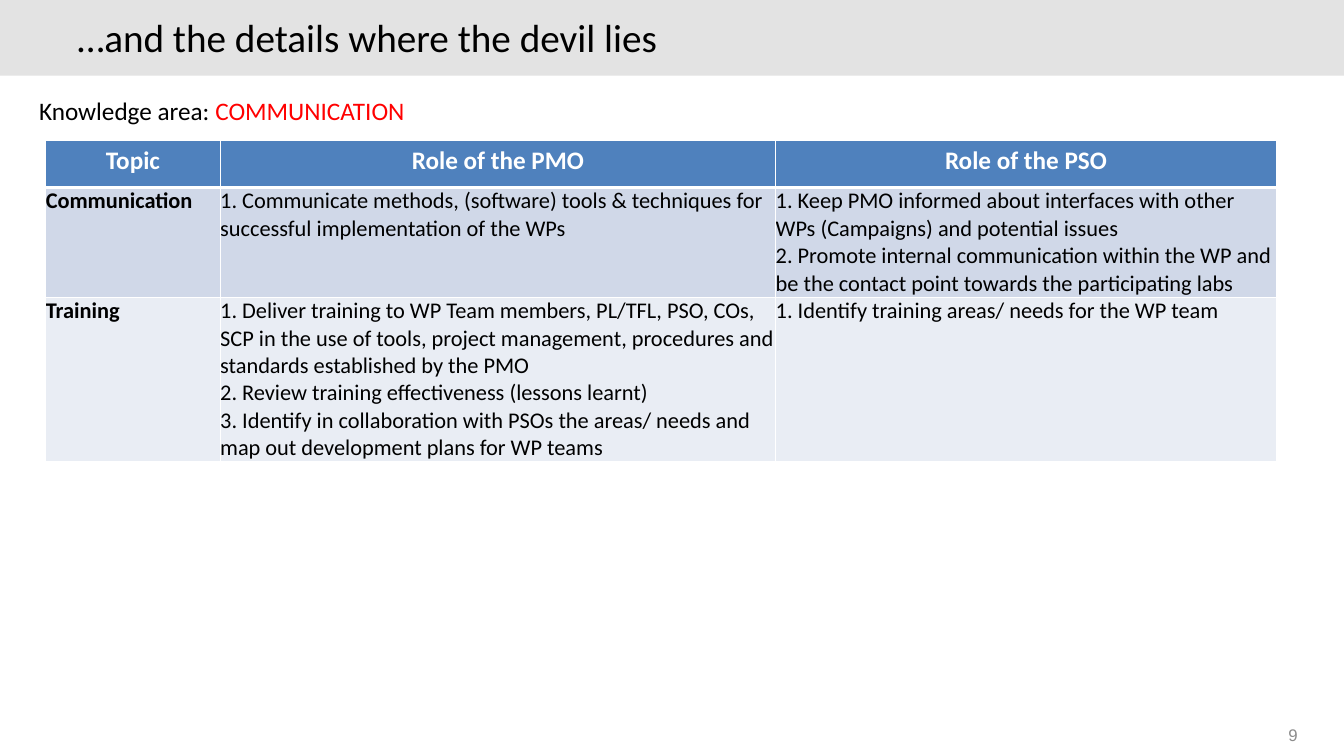
from dataclasses import dataclass

from lxml.etree import SubElement
from pptx import Presentation
from pptx.dml.color import RGBColor
from pptx.enum.shapes import MSO_SHAPE
from pptx.enum.text import MSO_ANCHOR, MSO_AUTO_SIZE, PP_ALIGN
from pptx.oxml.ns import qn
from pptx.slide import Slide
from pptx.table import _Cell
from pptx.text.text import TextFrame, _Paragraph
from pptx.util import Pt

BLACK = RGBColor(0x00, 0x00, 0x00)
WHITE = RGBColor(0xFF, 0xFF, 0xFF)
RED = RGBColor(0xFF, 0x00, 0x00)
BAND_GREY = RGBColor(0xE3, 0xE3, 0xE3)
NUMBER_GREY = RGBColor(0x8C, 0x8C, 0x8C)
HEADER_BLUE = RGBColor(0x4F, 0x81, 0xBD)
ROW_BLUE = RGBColor(0xD0, 0xD8, 0xE8)
ROW_PALE = RGBColor(0xE9, 0xED, 0xF4)

COLUMN_WIDTHS = (124.6, 396.8, 357.6)
THIN, THICK = 1, 3


@dataclass(frozen=True)
class TextStyle:
    size: float
    color: RGBColor = BLACK
    bold: bool = False
    font: str = "Calibri"


@dataclass(frozen=True)
class RoleRow:
    height: float
    fill: RGBColor
    topic: str
    pmo: tuple[str, ...]
    pso: tuple[str, ...]


HEADER = TextStyle(18, WHITE, bold=True)
TOPIC = TextStyle(16, bold=True)
DUTY = TextStyle(16)

COLUMN_TITLES = ("Topic", "Role of the PMO", "Role of the PSO")
HEADER_HEIGHT = 34
ROLE_ROWS = (
    RoleRow(
        78.5, ROW_BLUE, "Communication",
        ("1. Communicate methods, (software) tools & techniques for "
         "successful implementation of the WPs",),
        ("1. Keep PMO informed about interfaces with other WPs (Campaigns) "
         "and potential issues",
         "2. Promote internal communication within the WP and be the contact "
         "point towards the participating labs"),
    ),
    RoleRow(
        117.5, ROW_PALE, "Training",
        ("1. Deliver training to WP Team members, PL/TFL, PSO, COs, SCP in the "
         "use of tools, project management, procedures and standards "
         "established by the PMO",
         "2. Review training effectiveness (lessons learnt)",
         "3. Identify in collaboration with PSOs the areas/ needs and map out "
         "development plans for WP teams"),
        ("1. Identify training areas/ needs for the WP team",),
    ),
)


def add_run(paragraph: _Paragraph, text: str, style: TextStyle) -> None:
    run = paragraph.add_run()
    run.text = text
    run.font.name = style.font
    run.font.size = Pt(style.size)
    run.font.bold = style.bold
    run.font.color.rgb = style.color


def add_label(slide: Slide, left: float, top: float, width: float,
              height: float) -> TextFrame:
    frame = slide.shapes.add_textbox(
        Pt(left), Pt(top), Pt(width), Pt(height)).text_frame
    frame.word_wrap = True
    return frame


def set_borders(cell: _Cell, top: float, bottom: float) -> None:
    properties = cell._tc.get_or_add_tcPr()
    edges = (("a:lnL", THIN), ("a:lnR", THIN), ("a:lnT", top), ("a:lnB", bottom))
    for position, (tag, width) in enumerate(edges):
        line = SubElement(properties, qn(tag), w=str(Pt(width)))
        fill = SubElement(line, qn("a:solidFill"))
        SubElement(fill, qn("a:srgbClr"), val=str(WHITE))
        properties.insert(position, line)


def fill_cell(cell: _Cell, lines: tuple[str, ...], style: TextStyle,
              fill: RGBColor) -> None:
    cell.fill.solid()
    cell.fill.fore_color.rgb = fill
    frame = cell.text_frame
    for index, line in enumerate(lines):
        paragraph = frame.add_paragraph() if index else frame.paragraphs[0]
        add_run(paragraph, line, style)


def add_title(slide: Slide) -> None:
    title = slide.shapes.title
    title.left, title.top, title.width, title.height = (
        Pt(48), Pt(9.4), Pt(792), Pt(36))
    frame = title.text_frame
    frame.auto_size = MSO_AUTO_SIZE.NONE
    frame.vertical_anchor = MSO_ANCHOR.MIDDLE
    heading = frame.paragraphs[0]
    heading.alignment = PP_ALIGN.LEFT
    heading.line_spacing = Pt(32)
    add_run(heading, "…and the details where the devil lies", TextStyle(28))


def add_role_table(slide: Slide) -> None:
    heights = (HEADER_HEIGHT, *(row.height for row in ROLE_ROWS))
    table = slide.shapes.add_table(
        len(heights), len(COLUMN_WIDTHS), Pt(32.7), Pt(100),
        Pt(sum(COLUMN_WIDTHS)), Pt(sum(heights))).table
    for column, width in zip(table.columns, COLUMN_WIDTHS):
        column.width = Pt(width)
    for table_row, height in zip(table.rows, heights):
        table_row.height = Pt(height)

    # Column titles
    for cell, column_title in zip(table.rows[0].cells, COLUMN_TITLES):
        fill_cell(cell, (column_title,), HEADER, HEADER_BLUE)
        cell.text_frame.paragraphs[0].alignment = PP_ALIGN.CENTER
        set_borders(cell, THIN, THICK)

    # Topics with the duties of each office
    for number, row in enumerate(ROLE_ROWS, start=1):
        contents = (((row.topic,), TOPIC), (row.pmo, DUTY), (row.pso, DUTY))
        for cell, (lines, style) in zip(table.rows[number].cells, contents):
            fill_cell(cell, lines, style, row.fill)
            cell.margin_left = cell.margin_right = Pt(0)
            cell.margin_top = cell.margin_bottom = Pt(0)
            set_borders(cell, THICK if number == 1 else THIN, THIN)


def main() -> None:
    presentation = Presentation()
    presentation.slide_width, presentation.slide_height = Pt(960), Pt(540)
    slide = presentation.slides.add_slide(presentation.slide_layouts[5])

    # Title band, placed behind the title
    band = slide.shapes.add_shape(
        MSO_SHAPE.RECTANGLE, Pt(0), Pt(0), Pt(960), Pt(54))
    band.shadow.inherit = False
    band.fill.solid()
    band.fill.fore_color.rgb = BAND_GREY
    band.line.fill.background()
    slide.shapes.title._element.addprevious(band._element)
    add_title(slide)

    # Slide number
    slide_number = add_label(slide, 877, 514, 57, 16).paragraphs[0]
    slide_number.alignment = PP_ALIGN.RIGHT
    add_run(slide_number, "9", TextStyle(12, NUMBER_GREY, font="Arial"))

    add_role_table(slide)

    # Knowledge area
    knowledge_area = add_label(slide, 20.9, 64.8, 300, 29).paragraphs[0]
    add_run(knowledge_area, "Knowledge area: ", TextStyle(18))
    add_run(knowledge_area, "COMMUNICATION", TextStyle(18, RED))

    presentation.save("out.pptx")


if __name__ == "__main__":
    main()
